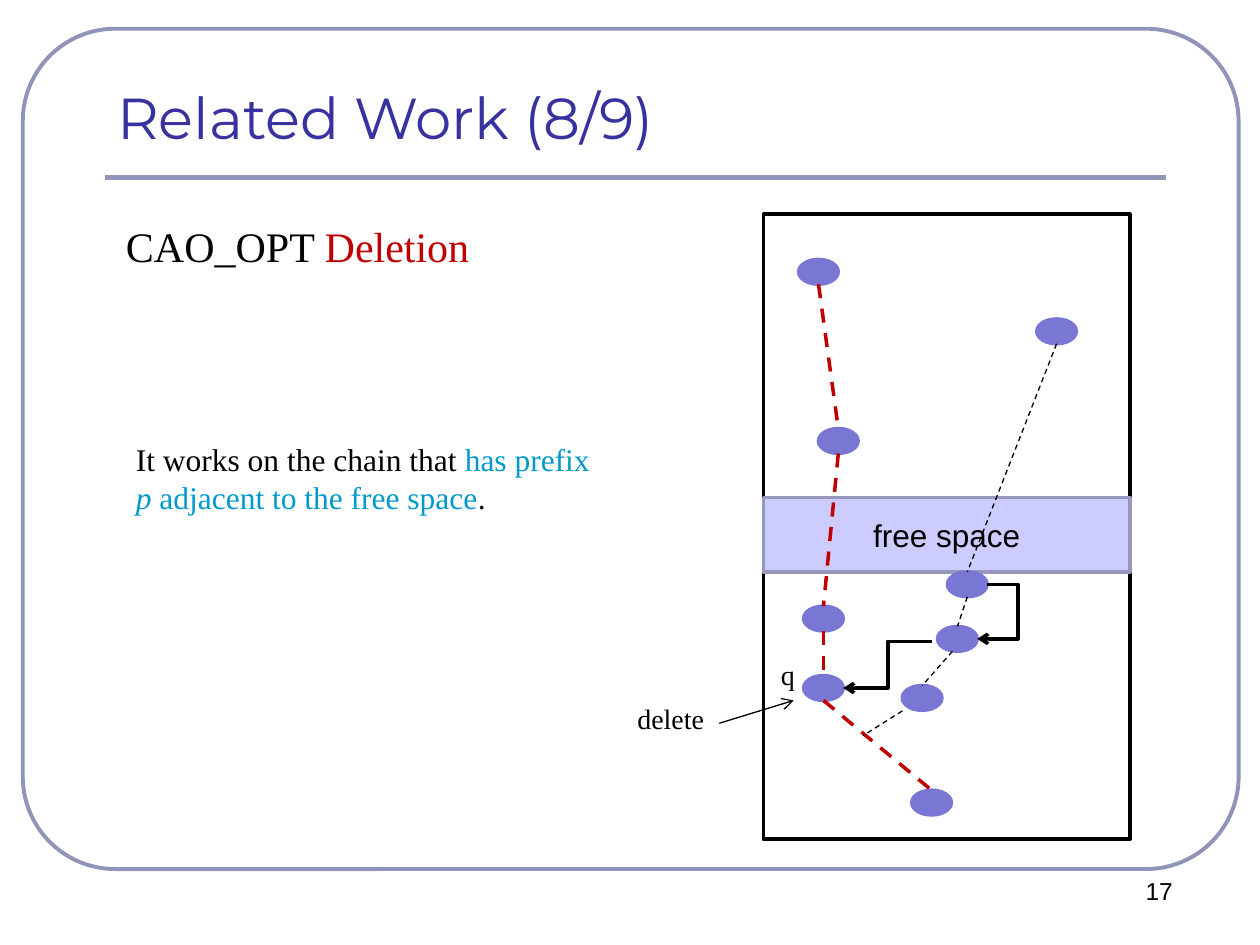
from itertools import pairwise

from lxml.etree import SubElement
from pptx import Presentation
from pptx.dml.color import RGBColor
from pptx.enum.dml import MSO_LINE as Dash
from pptx.enum.shapes import MSO_CONNECTOR as Link, MSO_SHAPE as Shape
from pptx.enum.text import MSO_ANCHOR as Anchor, PP_ALIGN as Align
from pptx.oxml.ns import qn
from pptx.util import Cm, Pt

COLORS = {
    "black": "000000", "white": "FFFFFF", "red": "C00000", "cyan": "0099CC",
    "title": "3732A0", "frame": "9094B8", "dot": "7A76D4",
    "free": "CCCCFF", "free_edge": "9797BD",
}
SERIF, SANS, DISPLAY = "Times New Roman", "Arial", "Montserrat"

# Lengths are centimetres: left, top, width, height
FRAME = (0.46, 0.58, 24.51, 16.94)
TITLE_RULE = ((2.11, 3.58), (23.5, 3.58))
MEMORY = (15.39, 4.32, 7.39, 12.6)
FREE_SPACE = (15.39, 10.03, 7.39, 1.5)
DOT_WIDTH, DOT_HEIGHT = 0.8, 0.5

# Centres of the dots, each chain from top to bottom
RED_CHAIN = [(16.5, 5.48), (16.9, 8.89), (16.6, 12.47), (16.6, 13.87), (18.78, 16.18)]
BLACK_CHAIN = [(21.3, 6.68), (19.5, 11.78), (19.3, 12.88)]
LAST_DOT = (18.59, 14.07)
LOOSE_LINKS = [((18.19, 14.33), (17.4, 14.83)), ((19.2, 13.13), (18.59, 13.82))]
DELETE_ARROW = ((14.5, 14.58), (16, 14.12))
# Start, end, and bend position as a share of the width
MOVES = [((18.8, 12.93), (17, 13.87), 0.5), ((19.9, 11.78), (19.7, 12.88), -3.1)]

# Place, font, size, spans (text, colour, italic), then format values
TEXTS = [
    ((2.11, 1.52, 21.39, 1.65), DISPLAY, 33, [("Related Work (8/9)", "title", False)],
     {"vertical_anchor": Anchor.BOTTOM}, Align.LEFT),
    ((22, 17.53, 2.74, 1.27), SANS, 14, [("17", "black", False)], {}, Align.CENTER),
    ((2.29, 4.32, 7.7, 1.27), SERIF, 24,
     [("CAO_OPT ", "black", False), ("Deletion", "red", False)], {}, Align.LEFT),
    ((2.49, 8.74, 9.8, 2.54), SERIF, 18,
     [("It works on the chain that ", "black", False), ("has prefix ", "cyan", False),
      ("p", "cyan", True), (" adjacent to the free space", "cyan", False),
      (".", "black", False)], {}, Align.LEFT),
    ((15.49, 13.13, 0.79, 0.94), SERIF, 16, [("q", "black", False)],
     {"word_wrap": False}, Align.LEFT),
    ((12.6, 14.02, 2.11, 0.94), SERIF, 16, [("delete", "black", False)],
     {"word_wrap": False}, Align.LEFT),
]


def color(name):
    return RGBColor.from_string(COLORS[name])


def write(box, font, size, spans, formats, align):
    for name, value in ({"word_wrap": True, "vertical_anchor": Anchor.TOP} | formats).items():
        setattr(box.text_frame, name, value)
    para = box.text_frame.paragraphs[0]
    para.alignment = align
    for text, shade, italic in spans:
        span = para.add_run()
        span.text = text
        for name, value in {"name": font, "size": Pt(size), "italic": italic}.items():
            setattr(span.font, name, value)
        span.font.color.rgb = color(shade)


def add_shape(page, kind, place, fill, edge, width=2):
    shape = page.shapes.add_shape(kind, *map(Cm, place))
    shape.shadow.inherit = False
    if fill:
        shape.fill.solid()
        shape.fill.fore_color.rgb = color(fill)
    else:
        shape.fill.background()
    shape.line.color.rgb = color(edge)
    shape.line.width = Pt(width)
    return shape


def add_line(page, start, end, shade, width, dash=None, arrow=False, bend=None):
    kind = Link.STRAIGHT if bend is None else Link.ELBOW
    line = page.shapes.add_connector(kind, *map(Cm, start + end))
    line.line.color.rgb = color(shade)
    line.line.width = Pt(width)
    if dash:
        line.line.dash_style = dash
    properties = line._element.spPr
    if arrow:
        SubElement(properties.find(qn("a:ln")), qn("a:tailEnd"), type="arrow")
    if bend is not None:
        geometry = properties.find(qn("a:prstGeom"))
        guides = geometry.find(qn("a:avLst"))
        if guides is None:
            guides = SubElement(geometry, qn("a:avLst"))
        SubElement(guides, qn("a:gd"), name="adj1", fmla=f"val {round(bend * 100000)}")
    SubElement(properties, qn("a:effectLst"))


def add_chain(page, dots, shade, width):
    """Link each dot's bottom to the next dot's top."""
    for (x1, y1), (x2, y2) in pairwise(dots):
        add_line(page, (x1, y1 + DOT_HEIGHT / 2), (x2, y2 - DOT_HEIGHT / 2),
                 shade, width, Dash.DASH)


def main():
    deck = Presentation()
    deck.slide_width, deck.slide_height = Cm(25.4), Cm(19.05)
    page = deck.slides.add_slide(deck.slide_layouts[6])

    frame = add_shape(page, Shape.ROUNDED_RECTANGLE, FRAME, None, "frame", 2.25)
    frame.adjustments[0] = 0.11
    add_line(page, *TITLE_RULE, "frame", 3)

    add_shape(page, Shape.RECTANGLE, MEMORY, "white", "black")
    free = add_shape(page, Shape.RECTANGLE, FREE_SPACE, "free", "free_edge")
    write(free, SANS, 18, [("free space", "black", False)],
          {"vertical_anchor": Anchor.MIDDLE}, Align.CENTER)

    for x, y in RED_CHAIN + BLACK_CHAIN + [LAST_DOT]:
        place = (x - DOT_WIDTH / 2, y - DOT_HEIGHT / 2, DOT_WIDTH, DOT_HEIGHT)
        add_shape(page, Shape.OVAL, place, "dot", "dot")
    add_chain(page, RED_CHAIN, "red", 2)
    add_chain(page, BLACK_CHAIN, "black", 0.75)
    for start, end in LOOSE_LINKS:
        add_line(page, start, end, "black", 0.75, Dash.DASH)
    for start, end, bend in MOVES:
        add_line(page, start, end, "black", 2, arrow=True, bend=bend)
    add_line(page, *DELETE_ARROW, "black", 0.75, arrow=True)

    for place, *content in TEXTS:
        write(page.shapes.add_textbox(*map(Cm, place)), *content)

    deck.save("out.pptx")


if __name__ == "__main__":
    main()
